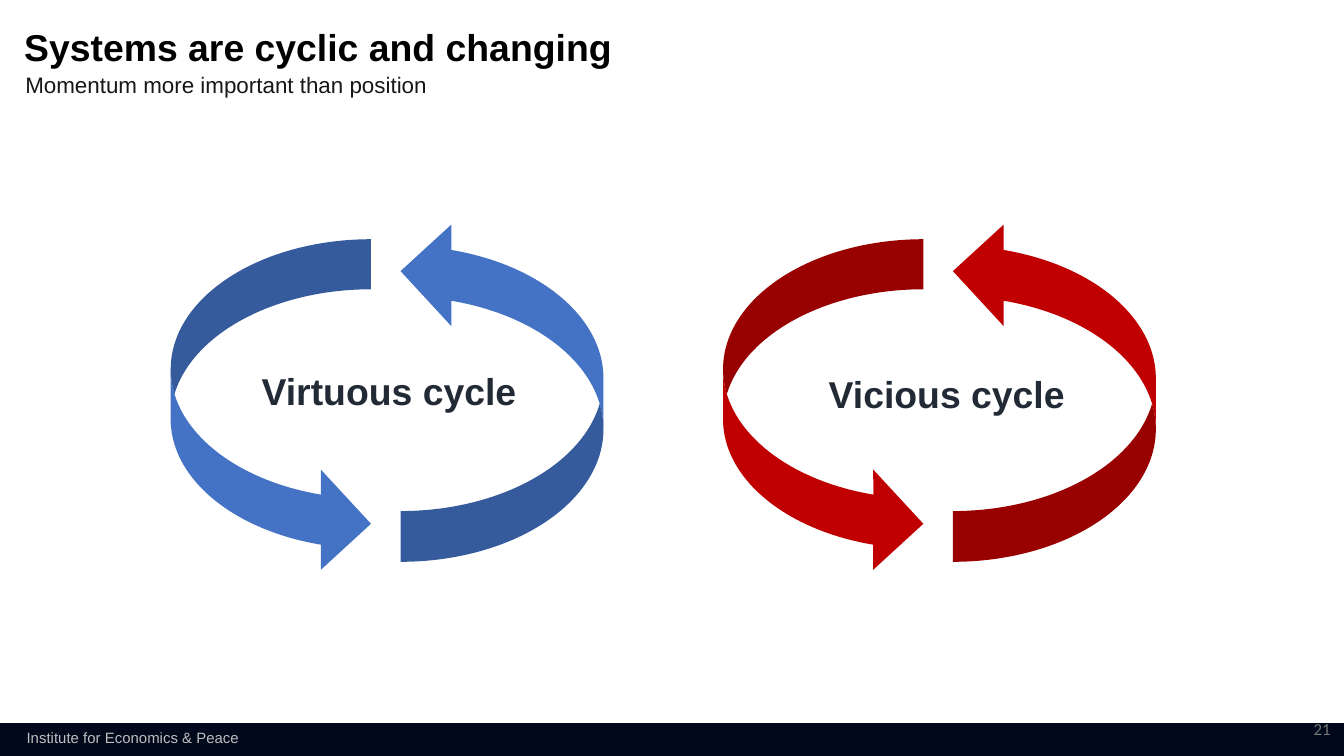
from pptx import Presentation
from pptx.dml.color import RGBColor
from pptx.enum import shapes, text
from pptx.util import Inches, Pt


def paint(color_format, value):
    color_format.rgb = RGBColor.from_string(value)


def add_filled(parent, preset, box, color):
    shape = parent.add_shape(preset, *map(Inches, box))
    shape.shadow.inherit = False
    shape.fill.solid()
    paint(shape.fill.fore_color, color)
    shape.line.fill.background()
    return shape


def add_text(parent, wording, box, size, color, font="Arial", bold=False,
             align=text.PP_ALIGN.LEFT, anchor=text.MSO_ANCHOR.TOP,
             insets=(0.1, 0.05), spacing=None):
    frame = parent.add_textbox(*map(Inches, box)).text_frame
    frame.word_wrap = True
    frame.vertical_anchor = anchor
    frame.margin_left = frame.margin_right = Inches(insets[0])
    frame.margin_top = frame.margin_bottom = Inches(insets[1])
    paragraph = frame.paragraphs[0]
    paragraph.alignment = align
    if spacing:
        paragraph.line_spacing = spacing
    run = paragraph.add_run()
    run.text = wording
    run.font.name = font
    run.font.size = Pt(size)
    run.font.bold = bold
    paint(run.font.color, color)


def add_footer(slide, left, top, width, height):
    add_filled(slide.shapes, shapes.MSO_SHAPE.RECTANGLE,
               (left, top, width, height), "00081C")
    add_text(slide.shapes, "Institute for Economics & Peace",
             (left + 0.1, top - 0.01, 1.8, 0.24), 8, "BFBFBF")
    add_text(slide.shapes, "21", (left + width - 0.83, top - 0.11, 0.83, 0.3),
             9, "737572", font="Calibri", align=text.PP_ALIGN.RIGHT,
             anchor=text.MSO_ANCHOR.MIDDLE)


def add_heading(slide, left, top, width):
    add_text(slide.shapes, "Systems are cyclic and changing",
             (left + 0.09, top, width, 0.3), 20, "000000", bold=True,
             insets=(0, 0), spacing=0.9)
    add_text(slide.shapes, "Momentum more important than position",
             (left, top + 0.26, width - 0.43, 0.3), 12, "181717")


def add_cycle(slide, left, top, width, height, name, color, label_box):
    cycle = slide.shapes.add_group_shape().shapes
    arrow = shapes.MSO_SHAPE.CURVED_RIGHT_ARROW
    add_filled(cycle, arrow, (left, top + height - 2.49, 1.49, 2.49), color)
    returning = add_filled(cycle, arrow,
                           (left + width - 1.51, top, 1.51, 2.54), color)
    returning.rotation = 180
    label_left, label_top, label_width = label_box
    add_text(cycle, name,
             (left + label_left, top + label_top, label_width, 0.44),
             20, "222A35", bold=True, align=text.PP_ALIGN.CENTER)


def main():
    deck = Presentation()
    deck.slide_width = Inches(10)
    deck.slide_height = deck.slide_width * 9 // 16
    slide = deck.slides.add_slide(deck.slide_layouts[6])
    add_footer(slide, 0, 5.38, 10, 0.25)
    add_heading(slide, 0.09, 0.22, 4.83)
    cycles = [("Virtuous cycle", "4472C4", (0.32, 1.05, 2.61)),
              ("Vicious cycle", "C00000", (0.28, 1.07, 2.77))]
    for column, (name, color, label_box) in enumerate(cycles):
        add_cycle(slide, 1.27 + column * 4.11, 1.64, 3.22, 2.63,
                  name, color, label_box)
    deck.save("out.pptx")


if __name__ == "__main__":
    main()
